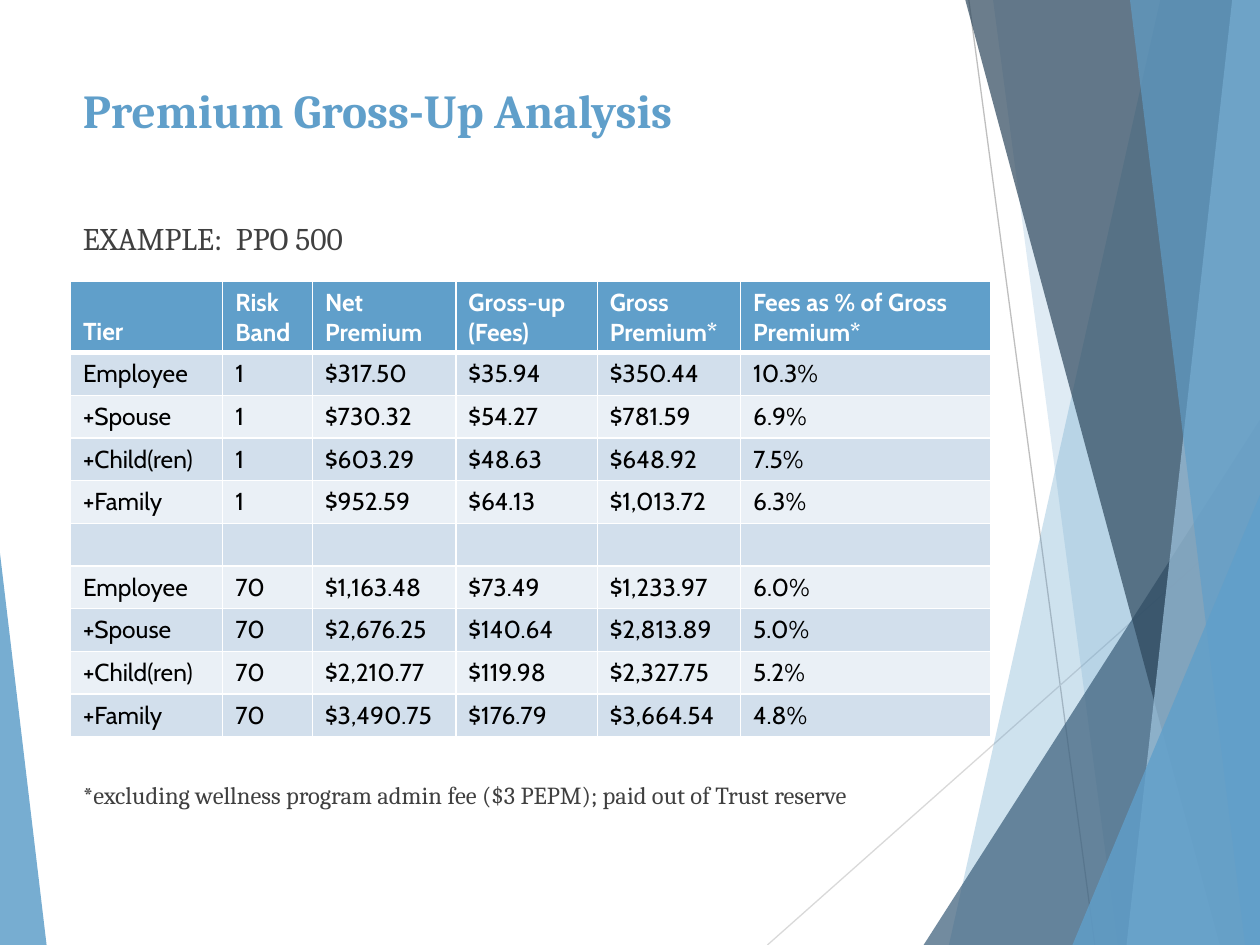
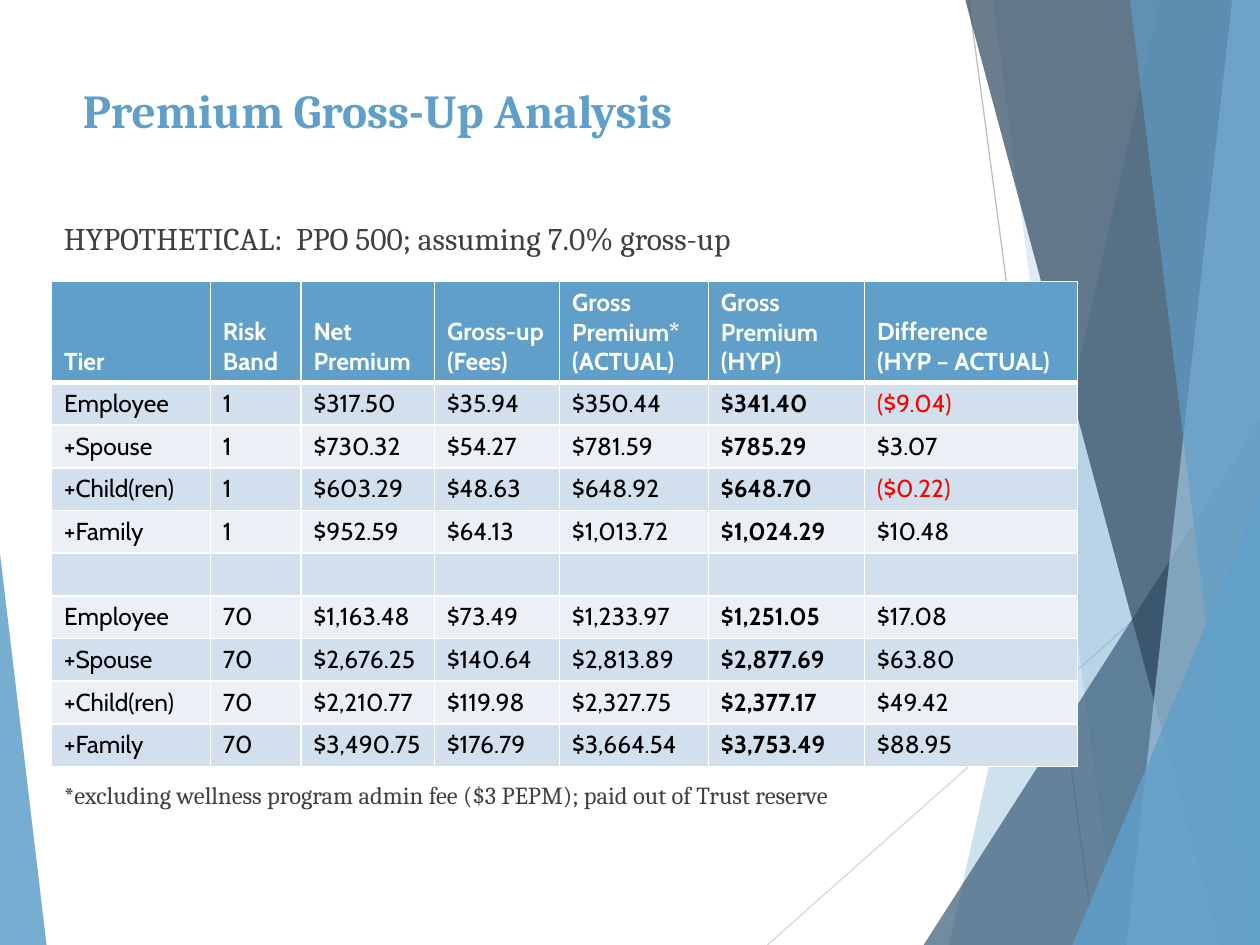
"""Build two premium gross-up slides with a shared title, faceted backdrop and rate table."""
from lxml import etree
from pptx import Presentation
from pptx.dml.color import RGBColor
from pptx.enum.shapes import MSO_CONNECTOR, MSO_SHAPE
from pptx.enum.text import MSO_ANCHOR
from pptx.oxml import parse_xml
from pptx.oxml.ns import nsdecls, qn
from pptx.util import Cm, Pt

STRAIGHT = MSO_CONNECTOR.STRAIGHT
TRIANGLE = MSO_SHAPE.ISOSCELES_TRIANGLE
BOTTOM = MSO_ANCHOR.BOTTOM

BLUE = RGBColor(0x60, 0x9F, 0xCA)
PALE_BLUE = RGBColor(0xA0, 0xC5, 0xDF)
SLATE = RGBColor(0x3C, 0x5F, 0x7B)
NAVY = RGBColor(0x2D, 0x47, 0x5C)
GREY = RGBColor(0xBF, 0xBF, 0xBF)
LIGHT_GREY = RGBColor(0xD9, 0xD9, 0xD9)
TEXT_GREY = RGBColor(0x40, 0x40, 0x40)
DARK_ROW = RGBColor(0xD2, 0xDF, 0xEC)
LIGHT_ROW = RGBColor(0xEA, 0xF0, 0xF6)
WHITE = RGBColor(0xFF, 0xFF, 0xFF)
BLACK = RGBColor(0x00, 0x00, 0x00)
RED = RGBColor(0xFF, 0x00, 0x00)

WIDTH, HEIGHT = 25.4, 19.05
ROW_HEIGHT = 0.86
TITLE = "Premium Gross-Up Analysis"
FOOTNOTE = "*excluding wellness program admin fee ($3 PEPM); paid out of Trust reserve"

HAIRLINES = [(19.53, 0, 22.07, HEIGHT, GREY), (WIDTH, 10.24, 15.47, HEIGHT, LIGHT_GREY)]

# Bands give top and bottom x; triangles give left, top, width and apex.
FACETS = [
    ((23.39, 19.13), BLUE, 30),
    ((20.02, 22.53), BLUE, 20),
    ((18.62, 8.46, 6.78, 1), SLATE, 72),
    ((19.46, 24.59), NAVY, 70),
    ((24.84, 22.71), PALE_BLUE, 70),
    ((22.78, 25.1), BLUE, 65),
    ((21.62, 9.98, 3.78, 1), BLUE, 80),
    ((0, 11.15, 0.94, 0), BLUE, 85),
]

SHARED_HEADINGS = ["Tier", "Risk Band", "Net Premium", "Gross-up (Fees)"]
SHARED_ROWS = [
    ["Employee", "1", "$317.50", "$35.94", "$350.44"],
    ["+Spouse", "1", "$730.32", "$54.27", "$781.59"],
    ["+Child(ren)", "1", "$603.29", "$48.63", "$648.92"],
    ["+Family", "1", "$952.59", "$64.13", "$1,013.72"],
    [""] * 5,
    ["Employee", "70", "$1,163.48", "$73.49", "$1,233.97"],
    ["+Spouse", "70", "$2,676.25", "$140.64", "$2,813.89"],
    ["+Child(ren)", "70", "$2,210.77", "$119.98", "$2,327.75"],
    ["+Family", "70", "$3,490.75", "$176.79", "$3,664.54"],
]

SLIDES = [
    {
        "subtitle": "EXAMPLE:  PPO 500",
        "left": 1.42,
        "columns": [3.07, 1.81, 2.89, 2.85, 2.89, 5.05],
        "header_height": 1.43,
        "headings": ["Gross Premium*", "Fees as % of Gross Premium*"],
        "extra": [["10.3%"], ["6.9%"], ["7.5%"], ["6.3%"], [""],
                  ["6.0%"], ["5.0%"], ["5.2%"], ["4.8%"]],
        "bold_column": None,
    },
    {
        "subtitle": "HYPOTHETICAL:  PPO 500; assuming 7.0% gross-up",
        "left": 1.04,
        "columns": [3.2, 1.83, 2.69, 2.52, 3, 3.15, 4.29],
        "header_height": 2.04,
        "headings": ["Gross Premium*\n(ACTUAL)", "Gross Premium (HYP)",
                     "Difference\n(HYP – ACTUAL)"],
        "extra": [["$341.40", "($9.04)"], ["$785.29", "$3.07"], ["$648.70", "($0.22)"],
                  ["$1,024.29", "$10.48"], ["", ""], ["$1,251.05", "$17.08"],
                  ["$2,877.69", "$63.80"], ["$2,377.17", "$49.42"], ["$3,753.49", "$88.95"]],
        "bold_column": 5,
    },
]


def style_paragraph(paragraph, name, size, color, bold=False):
    font = paragraph.font
    font.name, font.size, font.bold = name, Pt(size), bold
    font.color.rgb = color


def add_text(slide, text, left, top, height, size, color, bold=False):
    frame = slide.shapes.add_textbox(Cm(left), Cm(top), Cm(18.5), Cm(height)).text_frame
    frame.word_wrap = True
    frame.text = text
    style_paragraph(frame.paragraphs[0], "Cambria", size, color, bold)


presentation = Presentation()
presentation.slide_width, presentation.slide_height = Cm(WIDTH), Cm(HEIGHT)

for content in SLIDES:
    slide = presentation.slides.add_slide(presentation.slide_layouts[6])

    for x1, y1, x2, y2, color in HAIRLINES:
        hairline = slide.shapes.add_connector(STRAIGHT, Cm(x1), Cm(y1), Cm(x2), Cm(y2))
        hairline.line.color.rgb = color
        hairline.line.width = Pt(0.75)
        etree.SubElement(hairline._element.spPr, qn("a:effectLst"))

    for geometry, color, opacity in FACETS:
        if len(geometry) == 2:
            top_x, bottom_x = geometry
            builder = slide.shapes.build_freeform(Cm(top_x), 0)
            corners = [(WIDTH, 0), (WIDTH, HEIGHT), (bottom_x, HEIGHT)]
            builder.add_line_segments([(Cm(x), Cm(y)) for x, y in corners], close=True)
            facet = builder.convert_to_shape()
        else:
            left, top, width, apex = geometry
            facet = slide.shapes.add_shape(TRIANGLE, Cm(left), Cm(top), Cm(width), Cm(HEIGHT - top))
            facet.adjustments[0] = apex
        facet.shadow.inherit = False
        facet.line.fill.background()
        facet.fill.solid()
        facet.fill.fore_color.rgb = color
        color_element = facet._element.spPr.find(qn("a:solidFill"))[0]
        etree.SubElement(color_element, qn("a:alpha"), val=str(opacity * 1000))

    add_text(slide, TITLE, 1.42, 1.52, 2.74, 27, BLUE, True)
    add_text(slide, content["subtitle"], content["left"], 4.29, 1, 18, TEXT_GREY)
    add_text(slide, FOOTNOTE, content["left"], 15.6, 0.85, 14, TEXT_GREY)

    columns = content["columns"]
    rows = [SHARED_HEADINGS + content["headings"]]
    rows += [shared + extra for shared, extra in zip(SHARED_ROWS, content["extra"])]
    heights = [content["header_height"]] + [ROW_HEIGHT] * len(SHARED_ROWS)
    frame = slide.shapes.add_table(len(rows), len(columns), Cm(content["left"]), Cm(5.67),
                                   Cm(sum(columns)), Cm(sum(heights)))
    table = frame.table
    for column, width in zip(table.columns, columns):
        column.width = Cm(width)

    for row_index, values in enumerate(rows):
        table.rows[row_index].height = Cm(heights[row_index])
        is_header = row_index == 0
        for column_index, value in enumerate(values):
            cell = table.cell(row_index, column_index)
            cell.text = value
            if is_header:
                cell.vertical_anchor = BOTTOM
                fill_color, text_color = BLUE, WHITE
            else:
                fill_color = DARK_ROW if row_index % 2 else LIGHT_ROW
                text_color = RED if value.startswith("(") else BLACK
            if not value:
                cell.margin_top = cell.margin_bottom = 0
            bold = is_header or column_index == content["bold_column"]
            for paragraph in cell.text_frame.paragraphs:
                style_paragraph(paragraph, "Cabin", 14, text_color, bold)
            for side in "LRTB":
                thick = (is_header and side == "B") or (row_index == 1 and side == "T")
                cell._tc.get_or_add_tcPr().append(parse_xml(
                    f'<a:ln{side} {nsdecls("a")} w="{Pt(3 if thick else 1)}"><a:solidFill>'
                    f'<a:srgbClr val="{WHITE}"/></a:solidFill></a:ln{side}>'))
            cell.fill.solid()
            cell.fill.fore_color.rgb = fill_color

presentation.save("out.pptx")
